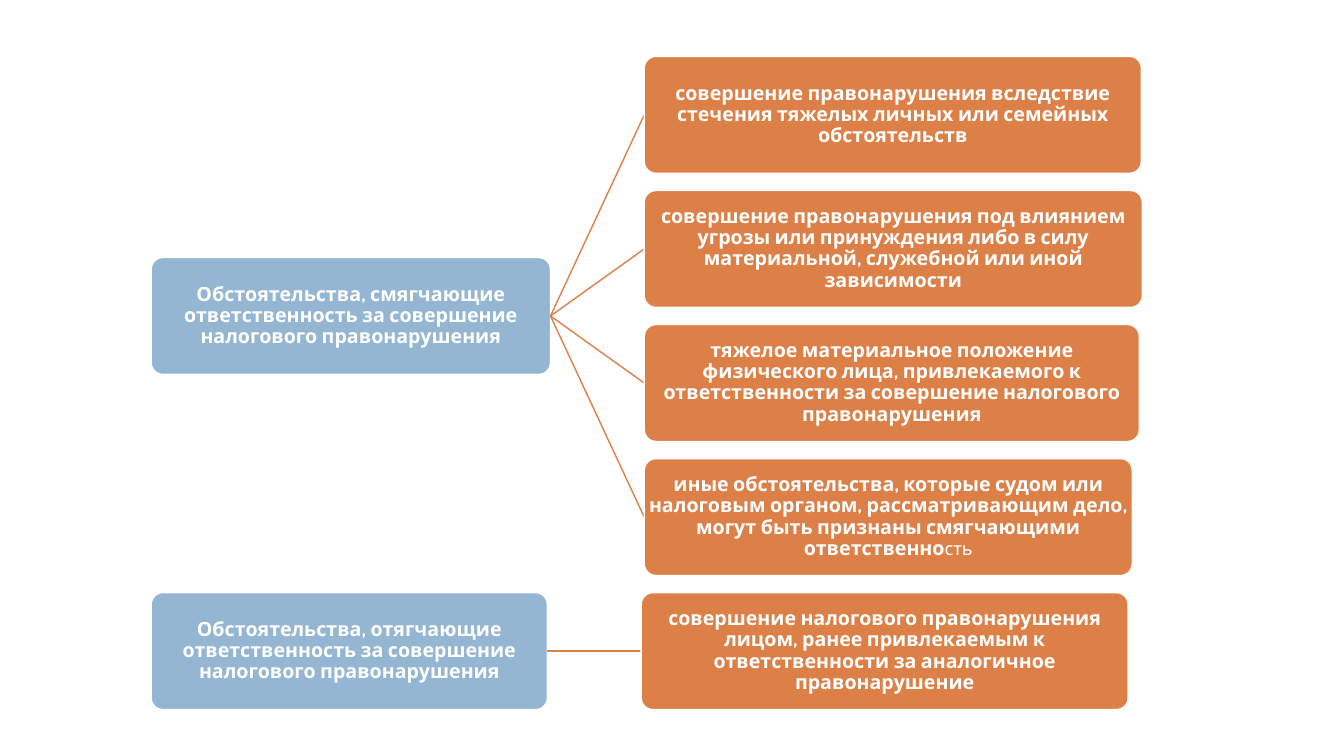
from lxml.etree import SubElement
from pptx import Presentation
from pptx.dml.color import RGBColor
from pptx.enum.shapes import MSO_CONNECTOR, MSO_SHAPE
from pptx.enum.text import MSO_ANCHOR, PP_ALIGN
from pptx.oxml.ns import qn
from pptx.util import Inches, Pt

BLUE = RGBColor(0x94, 0xB6, 0xD2)
ORANGE = RGBColor(0xDD, 0x80, 0x47)
WHITE = RGBColor(0xFF, 0xFF, 0xFF)

LEFT, RIGHT = 1.5, 6.39
TOP, PITCH, HEIGHT = 0.56, 1.33, 1.16

FRAME = {"word_wrap": True, "vertical_anchor": MSO_ANCHOR.MIDDLE}
FRAME.update({f"margin_{side}": Inches(0.01) for side in ("left", "right", "top", "bottom")})
PARA = {"alignment": PP_ALIGN.CENTER, "line_spacing": 0.9}
BOLD = {"name": "Cabin", "size": Pt(14), "bold": True}
LIGHT = {"name": "Cabin", "size": Pt(13), "bold": False}

# Each group: row and width of the cause, left edge of its cases, then (width, text, tail) per case
GROUPS = [
    (1.5, 3.96, "Обстоятельства, смягчающие ответственность за совершение налогового правонарушения",
     0, RIGHT, [
         (4.93, "совершение правонарушения вследствие стечения тяжелых личных или семейных "
                "обстоятельств", ""),
         (4.94, "совершение правонарушения под влиянием угрозы или принуждения либо в силу "
                "материальной, служебной или иной зависимости", ""),
         (4.91, "тяжелое материальное положение физического лица, привлекаемого к "
                "ответственности за совершение налогового правонарушения", ""),
         (4.84, "иные обстоятельства, которые судом или налоговым органом, рассматривающим "
                "дело, могут быть признаны смягчающими ответственно", "сть"),
     ]),
    (4, 3.93, "Обстоятельства, отягчающие ответственность за совершение налогового правонарушения",
     4, RIGHT - 0.03, [
         (4.83, "совершение налогового правонарушения лицом, ранее привлекаемым к "
                "ответственности за аналогичное правонарушение", ""),
     ]),
]


def apply(item, style):
    for key, value in style.items():
        setattr(item, key, value)


class Tree:
    """Draws boxes and links on a grid of equal rows."""

    def __init__(self, slide):
        self.shapes = slide.shapes

    def top(self, row):
        return TOP + PITCH * row

    def box(self, left, row, width, fill, text, tail=""):
        """Add a rounded box; the tail is set in lighter type."""
        shape = self.shapes.add_shape(
            MSO_SHAPE.ROUNDED_RECTANGLE, Inches(left), Inches(self.top(row)),
            Inches(width), Inches(HEIGHT))
        shape.adjustments[0] = 0.1
        shape.shadow.inherit = False
        shape.fill.solid()
        shape.fill.fore_color.rgb = fill
        shape.line.color.rgb = WHITE
        shape.line.width = Pt(1)
        frame = shape.text_frame
        apply(frame, FRAME)
        para = frame.paragraphs[0]
        apply(para, PARA)
        for part, style in ((text, BOLD), (tail, LIGHT)):
            if part:
                run = para.add_run()
                run.text = part
                apply(run.font, style)
                run.font.color.rgb = WHITE

    def link(self, start, row, end, goal):
        """Join the middles of two rows."""
        mid = HEIGHT / 2
        line = self.shapes.add_connector(
            MSO_CONNECTOR.STRAIGHT, Inches(start), Inches(self.top(row) + mid),
            Inches(end), Inches(self.top(goal) + mid))
        line.line.color.rgb = ORANGE
        line.line.width = Pt(1)
        SubElement(line._element.spPr, qn("a:effectLst"))


def main():
    deck = Presentation()
    deck.slide_width, deck.slide_height = Inches(13.33), Inches(7.5)
    tree = Tree(deck.slides.add_slide(deck.slide_layouts[6]))
    for row, width, cause, first, left, cases in GROUPS:
        tree.box(LEFT, row, width, BLUE, cause)
        for goal, (span, text, tail) in enumerate(cases, first):
            tree.link(LEFT + width, row, left, goal)
            tree.box(left, goal, span, ORANGE, text, tail)
    deck.save("out.pptx")


if __name__ == "__main__":
    main()
